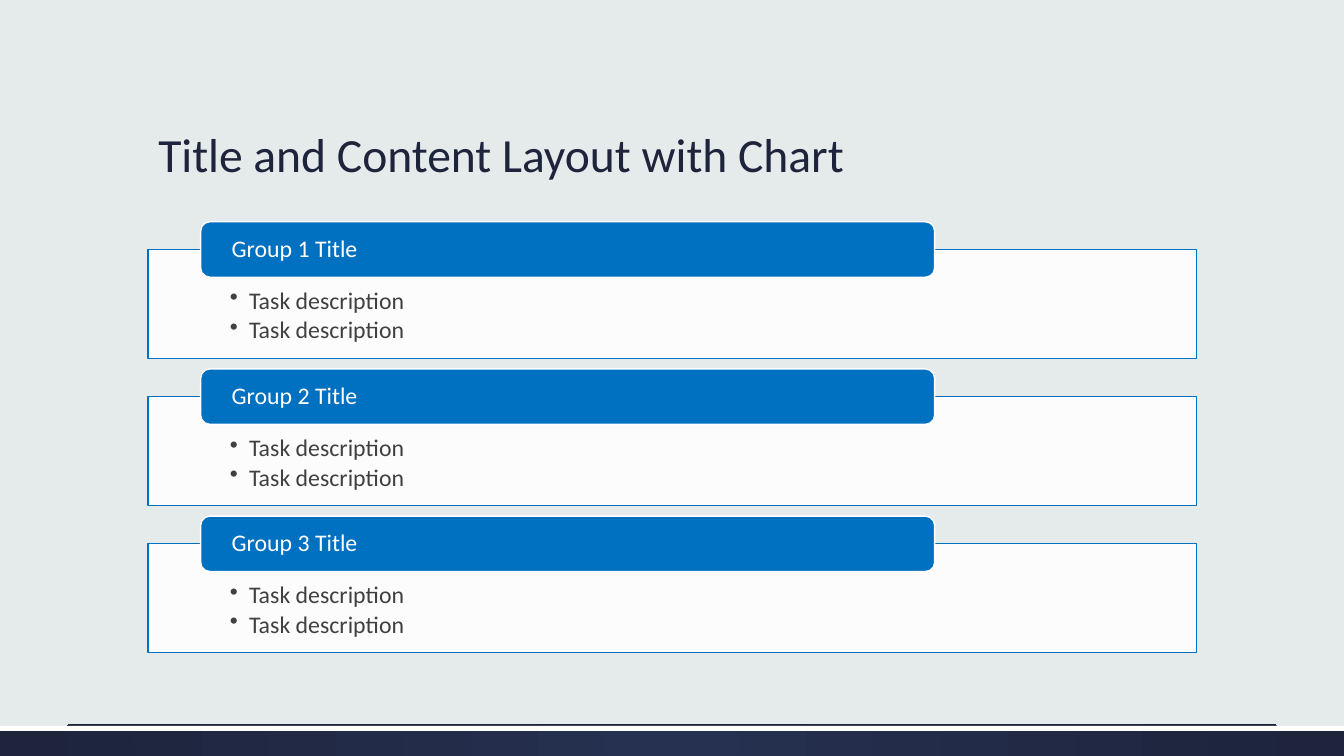
"""Build a title slide with three grouped task panels."""
from dataclasses import dataclass

from lxml import etree
from pptx import Presentation
from pptx.dml.color import RGBColor
from pptx.enum.shapes import MSO_CONNECTOR, MSO_SHAPE
from pptx.enum.text import MSO_ANCHOR, MSO_AUTO_SIZE, PP_ALIGN
from pptx.oxml.ns import qn
from pptx.util import Inches, Pt

RECT, ROUND = MSO_SHAPE.RECTANGLE, MSO_SHAPE.ROUNDED_RECTANGLE
TOP, MIDDLE, BOTTOM = MSO_ANCHOR.TOP, MSO_ANCHOR.MIDDLE, MSO_ANCHOR.BOTTOM
LEFT = PP_ALIGN.LEFT

TITLE = "Title and Content Layout with Chart"
GROUPS = [
    ("Group 1 Title", ["Task description", "Task description"]),
    ("Group 2 Title", ["Task description", "Task description"]),
    ("Group 3 Title", ["Task description", "Task description"]),
]


@dataclass(frozen=True)
class Theme:
    font: str = "Calibri"
    title_size: int = 34
    body_size: int = 17
    background: str = "E5EAEA"
    navy: str = "1D243C"
    navy_light: str = "263050"
    accent: str = "0070C0"
    white: str = "FFFFFF"
    text: str = "404040"


THEME = Theme()
SLIDE_W, SLIDE_H = 13.33, 7.5
MARGIN, CONTENT_W = 1.47, 10.4
FOOTER_TOP, FOOTER_H, STRIPE_H = 7.2, 0.3, 0.05
RULE_LEFT, RULE_Y = 0.67, 7.19
TAB_TOP, TAB_H, TAB_W, TAB_INDENT = 2.2, 0.55, 7.28, 0.52
PANEL_H, PITCH = 1.08, 1.46
BULLET_INDENT = 0.19


def rgb(color):
    return RGBColor.from_string(color)


def add_box(s, kind, box, fill, line=None):
    sp = s.shapes.add_shape(kind, *map(Inches, box))
    sp.shadow.inherit = False
    sp.fill.solid()
    sp.fill.fore_color.rgb = rgb(fill)
    if line:
        sp.line.color.rgb = rgb(line)
        sp.line.width = Pt(1)
    else:
        sp.line.fill.background()
    return sp


def set_frame(tf, insets, anchor):
    tf.word_wrap = True
    tf.auto_size = MSO_AUTO_SIZE.NONE
    tf.vertical_anchor = anchor
    tf.margin_left, tf.margin_top, tf.margin_right, tf.margin_bottom = map(Inches, insets)


def format_paragraph(p, size, color, after=0):
    p.alignment = LEFT
    p.line_spacing = 0.9
    p.space_after = Pt(after)
    p.font.name = THEME.font
    p.font.size = Pt(size)
    p.font.color.rgb = rgb(color)


def add_bullet(p):
    p.level = 1
    props = p._p.get_or_add_pPr()
    props.set("marL", str(Inches(BULLET_INDENT)))
    props.set("indent", str(-Inches(BULLET_INDENT)))
    etree.SubElement(props, qn("a:buChar")).set("char", "•")


def add_footer(s):
    bar = add_box(s, RECT, (0, FOOTER_TOP, SLIDE_W, FOOTER_H), THEME.navy)
    bar.fill.gradient()
    for stop, color in zip(bar.fill.gradient_stops, (THEME.navy_light, THEME.navy)):
        stop.color.rgb = rgb(color)
    gradient = bar._element.spPr.find(qn("a:gradFill"))
    gradient.remove(gradient.find(qn("a:lin")))
    radial = etree.SubElement(gradient, qn("a:path"))
    radial.set("path", "circle")
    center = etree.SubElement(radial, qn("a:fillToRect"))
    for side in "ltrb":
        center.set(side, "50000")
    add_box(s, RECT, (0, FOOTER_TOP, SLIDE_W, STRIPE_H), THEME.white)
    ends = (RULE_LEFT, RULE_Y, SLIDE_W - RULE_LEFT, RULE_Y)
    rule = s.shapes.add_connector(MSO_CONNECTOR.STRAIGHT, *map(Inches, ends))
    rule.line.color.rgb = rgb(THEME.navy)
    rule.line.width = Pt(0.75)
    etree.SubElement(rule._element.spPr, qn("a:effectLst"))


def add_title(s):
    title = s.shapes.title
    title.left, title.top = Inches(MARGIN), Inches(0.51)
    title.width, title.height = Inches(CONTENT_W), Inches(1.35)
    tf = title.text_frame
    tf.text = TITLE
    set_frame(tf, (0.1, 0.05, 0.1, 0.05), BOTTOM)
    format_paragraph(tf.paragraphs[0], THEME.title_size, THEME.navy)


def add_group(s, top, heading, tasks):
    panel_box = (MARGIN, top + TAB_H / 2, CONTENT_W, PANEL_H)
    panel = add_box(s, RECT, panel_box, THEME.white, THEME.accent)
    color = panel._element.spPr.find(qn("a:solidFill"))[0]
    etree.SubElement(color, qn("a:alpha")).set("val", "90000")
    tf = panel.text_frame
    set_frame(tf, (0.81, 0.39, 0.81, 0.13), TOP)
    for i, task in enumerate(tasks):
        p = tf.add_paragraph() if i else tf.paragraphs[0]
        p.text = task
        add_bullet(p)
        format_paragraph(p, THEME.body_size, THEME.text, 2.7)

    tab_box = (MARGIN + TAB_INDENT, top, TAB_W, TAB_H)
    tab = add_box(s, ROUND, tab_box, THEME.accent, THEME.white)
    tf = tab.text_frame
    tf.text = heading
    set_frame(tf, (0.28, 0, 0.28, 0), MIDDLE)
    format_paragraph(tf.paragraphs[0], THEME.body_size, THEME.white)


def main():
    prs = Presentation()
    prs.slide_width, prs.slide_height = Inches(SLIDE_W), Inches(SLIDE_H)
    s = prs.slides.add_slide(prs.slide_layouts[5])
    s.background.fill.solid()
    s.background.fill.fore_color.rgb = rgb(THEME.background)
    add_footer(s)
    add_title(s)
    for i, (heading, tasks) in enumerate(GROUPS):
        add_group(s, TAB_TOP + i * PITCH, heading, tasks)
    prs.save("out.pptx")


if __name__ == "__main__":
    main()
